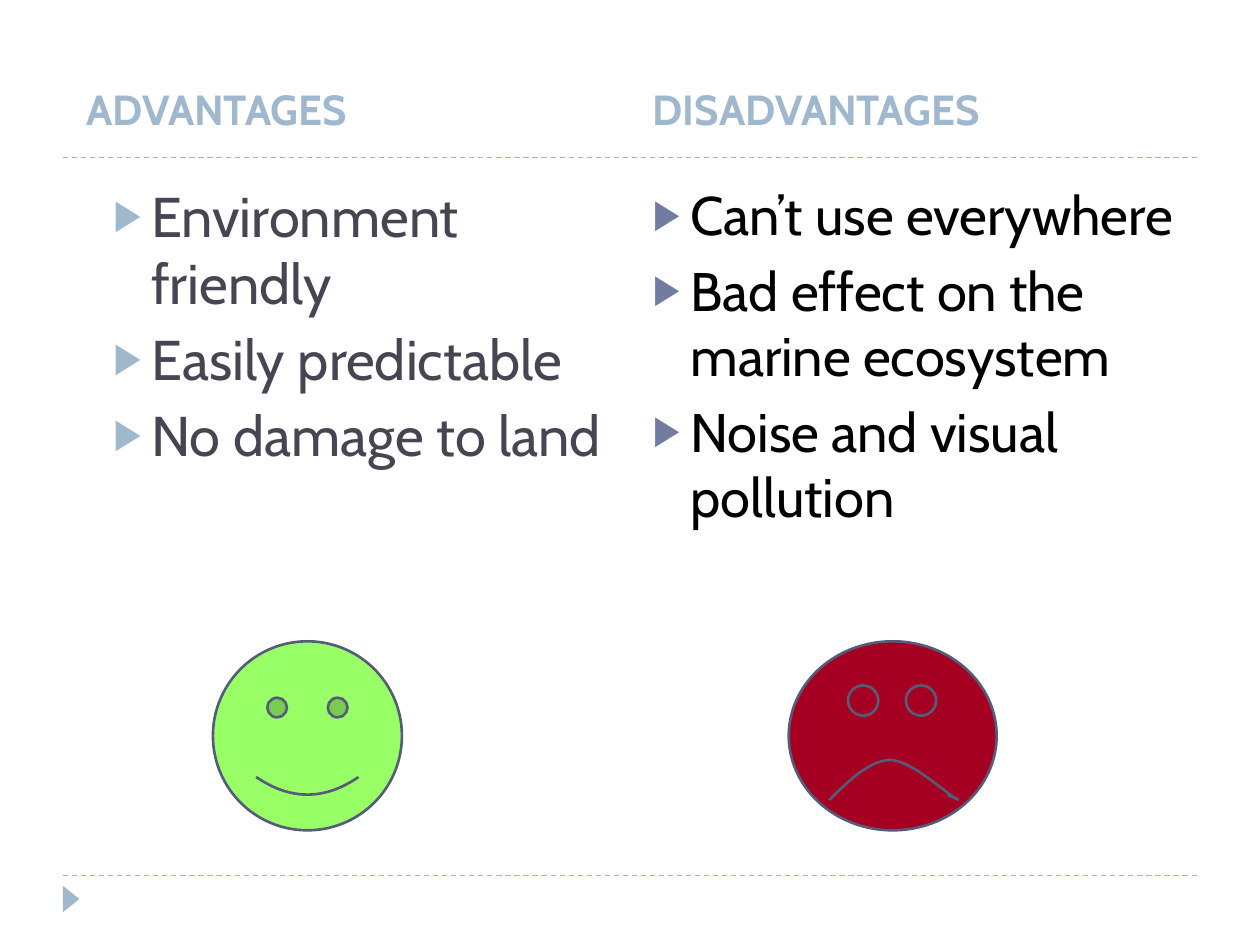
from lxml import etree
from pptx import Presentation
from pptx.dml.color import RGBColor
from pptx.enum.dml import MSO_LINE
from pptx.enum.shapes import MSO_CONNECTOR, MSO_SHAPE
from pptx.enum.text import MSO_ANCHOR, MSO_AUTO_SIZE
from pptx.oxml.ns import qn
from pptx.util import Pt

COLORS = {"accent": "9FB8CD", "text": "464653", "black": "000000", "bullet": "727CA3",
          "outline": "545C79", "happy": "99FF66", "sad": "A50021"}
FONT = "Cabin"


def rgb(name):
    return RGBColor.from_string(COLORS[name])


def add_shape(kind, left, top, width, height, fill, outline="outline"):
    sp = s.shapes.add_shape(kind, Pt(left), Pt(top), Pt(width), Pt(height))
    sp.shadow.inherit = False
    sp.fill.solid()
    sp.fill.fore_color.rgb = rgb(fill)
    if outline:
        sp.line.color.rgb = rgb(outline)
        sp.line.width = Pt(1.5)
    else:
        sp.line.fill.background()
    return sp


prs = Presentation()
prs.slide_width, prs.slide_height = Pt(720), Pt(540)
s = prs.slides.add_slide(prs.slide_layouts[4])
title = s.shapes.title
title._element.getparent().remove(title._element)

# Dashed rules and corner marker
for y in (90, 500.4):
    line = s.shapes.add_connector(MSO_CONNECTOR.STRAIGHT, Pt(36), Pt(y), Pt(684), Pt(y))
    line.line.color.rgb = rgb("accent")
    line.line.width = Pt(0.75)
    line.line.dash_style = MSO_LINE.DASH
    etree.SubElement(line._element.spPr, qn("a:effectLst"))
marker = add_shape(MSO_SHAPE.ISOSCELES_TRIANGLE, 33.1, 509, 15.1, 9.4, "accent", None)
marker.rotation = 90

# Headings and lists:
# placeholder, box, lines, size, colour, space before, level, left margin, bullet colour
blocks = [
    (1, (36.7, 25.9, 318.2, 54), [" ADVANTAGES"], 24, "accent", 6, 0, 0, None),
    (3, (365.8, 25.9, 318.2, 54), ["DISADVANTAGES"], 24, "accent", 6, 0, 0, None),
    (2, (36, 100.1, 318.2, 215.3),
     ["Environment friendly", "Easily predictable", "No damage to land"],
     32, "text", 5, 1, 43.2, "accent"),
    (4, (365.8, 100.1, 318.2, 385.9),
     ["Can’t use everywhere", "Bad effect on the marine ecosystem",
      "Noise and visual pollution"],
     31, "black", 6, 0, 21.6, "bullet"),
]
for idx, box, lines, size, color, before, level, margin, bullet in blocks:
    sp = s.placeholders[idx]
    sp.left, sp.top, sp.width, sp.height = [Pt(v) for v in box]
    tf = sp.text_frame
    tf.text = "\n".join(lines)
    tf.word_wrap = True
    tf.auto_size = MSO_AUTO_SIZE.NONE
    tf.vertical_anchor = MSO_ANCHOR.TOP if bullet else MSO_ANCHOR.BOTTOM
    for p in tf.paragraphs:
        p.level = level
        p.space_before, p.space_after = Pt(before), Pt(0)
        font = p.runs[0].font
        font.name, font.size, font.bold = FONT, Pt(size), not bullet
        font.color.rgb = rgb(color)
        pPr = p._p.get_or_add_pPr()
        pPr.set("marL", str(Pt(margin)))
        pPr.set("indent", str(Pt(-21.6 if bullet else 0)))
        if bullet:
            clr = etree.SubElement(pPr, qn("a:buClr"))
            etree.SubElement(clr, qn("a:srgbClr"), val=COLORS[bullet])
            etree.SubElement(pPr, qn("a:buSzPct"), val="76000")
            etree.SubElement(pPr, qn("a:buChar"), char="▶")
        else:
            etree.SubElement(pPr, qn("a:buNone"))

# Happy face
add_shape(MSO_SHAPE.SMILEY_FACE, 121.7, 366.5, 108, 108, "happy")

# Sad face with two eyes
add_shape(MSO_SHAPE.OVAL, 450.7, 366.5, 118.8, 108, "sad")
for x in (484.6, 517.7):
    add_shape(MSO_SHAPE.OVAL, x, 391.7, 17.3, 17.3, "sad")

# Frown: Bezier segments sampled into short strokes
knots = [(473.8, 457.2), (485.3, 445.7), (496.8, 434.9), (508.3, 434.2),
         (519.8, 434.2), (538.6, 451.4), (544.3, 455),
         (550.1, 458.6), (547.2, 456.5), (541.4, 454.3)]
STEPS = 16
points = []
for i in range(0, len(knots) - 1, 3):
    for step in range(1, STEPS + 1):
        t = step / STEPS
        weights = ((1 - t) ** 3, 3 * t * (1 - t) ** 2, 3 * t ** 2 * (1 - t), t ** 3)
        points.append(tuple(Pt(sum(w * k[axis] for w, k in zip(weights, knots[i:i + 4])))
                            for axis in (0, 1)))
builder = s.shapes.build_freeform(Pt(knots[0][0]), Pt(knots[0][1]))
builder.add_line_segments(points, close=False)
frown = builder.convert_to_shape()
frown.shadow.inherit = False
frown.fill.background()
frown.line.color.rgb = rgb("outline")
frown.line.width = Pt(1.5)

prs.save("out.pptx")
